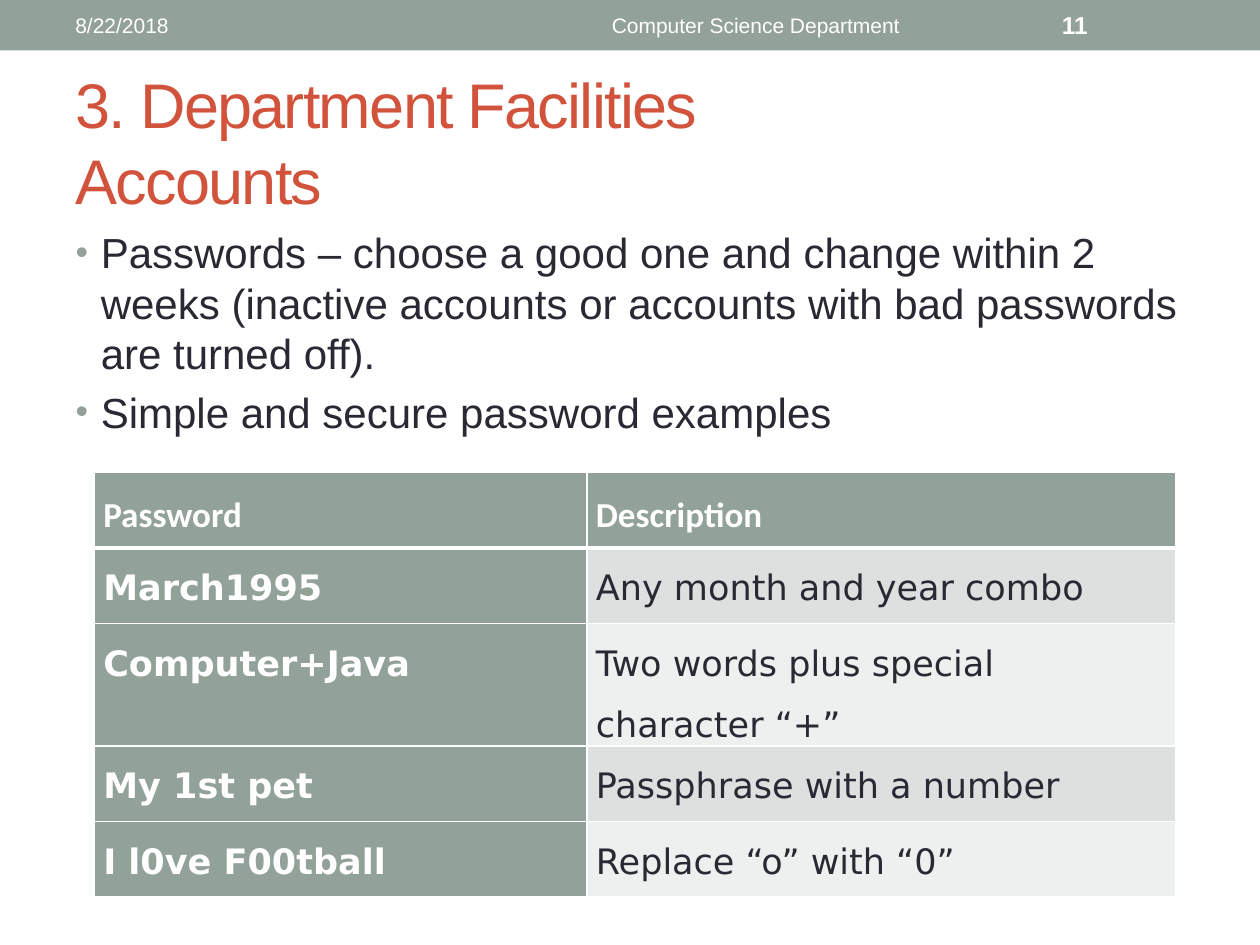
from lxml import etree
from pptx import Presentation
from pptx.dml.color import RGBColor
from pptx.enum.shapes import MSO_SHAPE
from pptx.enum.text import MSO_ANCHOR, MSO_AUTO_SIZE, PP_ALIGN
from pptx.oxml.ns import qn
from pptx.util import Inches, Pt

RECT = MSO_SHAPE.RECTANGLE
TOP, MIDDLE = MSO_ANCHOR.TOP, MSO_ANCHOR.MIDDLE
LEFT, CENTER = PP_ALIGN.LEFT, PP_ALIGN.CENTER
NO_FIT = MSO_AUTO_SIZE.NONE

COLORS = {
    "sage": "93A299",
    "red": "D2533C",
    "ink": "292934",
    "white": "FFFFFF",
    "band_dark": "DCE0DE",
    "band_light": "EEF0EF",
}

TITLE_LINES = ["3. Department Facilities", "Accounts"]
BULLETS = [
    "Passwords – choose a good one and change within 2 weeks "
    "(inactive accounts or accounts with bad passwords are turned off).",
    "Simple and secure password examples",
]
ROWS = [
    ("Password", "Description"),
    ("March1995", "Any month and year combo"),
    ("Computer+Java", "Two words plus special character “+”"),
    ("My 1st pet", "Passphrase with a number"),
    ("I l0ve F00tball", "Replace “o” with “0”"),
]
COL_WIDTHS = [3.91, 4.67]
ROW_HEIGHTS = [0.6, 0.6, 0.71, 0.6, 0.6]


def rgb(name):
    return RGBColor.from_string(COLORS[name])


def add_run(p, text, size, color, font="Arial", bold=False):
    r = p.add_run()
    r.text = text
    r.font.size = Pt(size)
    r.font.name = font
    r.font.bold = bold
    r.font.color.rgb = rgb(color)
    return r


def place(sp, left, top, width, height, anchor):
    """Position a text shape and return its wrapped, fixed-size frame."""
    sp.left, sp.top = Inches(left), Inches(top)
    sp.width, sp.height = Inches(width), Inches(height)
    tf = sp.text_frame
    tf.word_wrap = True
    tf.auto_size = NO_FIT
    tf.vertical_anchor = anchor
    return tf


def add_header_bar(s):
    sp = s.shapes.add_shape(RECT, 0, 0, Inches(10), Inches(0.4))
    sp.shadow.inherit = False
    sp.fill.solid()
    sp.fill.fore_color.rgb = rgb("sage")
    sp.line.fill.background()


def add_header_text(s, text, left, width, size=12, align=LEFT, bold=False):
    sp = s.shapes.add_textbox(0, 0, 0, 0)
    p = place(sp, left, 0.02, width, 0.36, MIDDLE).paragraphs[0]
    p.alignment = align
    add_run(p, text, size, "white", bold=bold)


def fill_title(s):
    p = place(s.shapes.title, 0.5, 0.58, 9, 1.08, MIDDLE).paragraphs[0]
    p.alignment = LEFT
    for i, line in enumerate(TITLE_LINES):
        if i:
            p.add_line_break()
        r = add_run(p, line, 36, "red")
        r.font._element.set("spc", "-100")


def set_bullet(p, indent):
    pPr = p._p.get_or_add_pPr()
    pPr.set("marL", str(Inches(indent)))
    pPr.set("indent", str(-Inches(indent)))
    color = etree.SubElement(pPr, qn("a:buClr"))
    etree.SubElement(color, qn("a:srgbClr"), val=COLORS["sage"])
    etree.SubElement(pPr, qn("a:buSzPct"), val="85000")
    etree.SubElement(pPr, qn("a:buFont"), typeface="Arial")
    etree.SubElement(pPr, qn("a:buChar"), char="•")


def fill_body(s):
    tf = place(s.placeholders[1], 0.5, 1.75, 9, 5.33, TOP)
    for i, text in enumerate(BULLETS):
        p = tf.add_paragraph() if i else tf.paragraphs[0]
        p.alignment = LEFT
        p.space_before = Pt(4.8)
        set_bullet(p, 0.2)
        add_run(p, text, 24, "ink")


def set_borders(cell, top=1, bottom=1):
    tcPr = cell._tc.get_or_add_tcPr()
    sides = [("L", 1), ("R", 1), ("T", top), ("B", bottom)]
    for i, (side, width) in enumerate(sides):
        ln = etree.Element(qn(f"a:ln{side}"), w=str(Pt(width)))
        fill = etree.SubElement(ln, qn("a:solidFill"))
        etree.SubElement(fill, qn("a:srgbClr"), val=COLORS["white"])
        tcPr.insert(i, ln)


def fill_cell(cell, text, row, col):
    strong = row == 0 or col == 0
    band = "band_dark" if row % 2 else "band_light"
    cell.fill.solid()
    cell.fill.fore_color.rgb = rgb("sage" if strong else band)
    cell.margin_left = cell.margin_right = Inches(0.07)
    cell.margin_top = cell.margin_bottom = 0
    set_borders(cell, top=3 if row == 1 else 1, bottom=3 if row == 0 else 1)
    p = cell.text_frame.paragraphs[0]
    p.line_spacing = 1.5
    add_run(p, text, 20, "white" if strong else "ink",
            "DejaVu Sans" if row else "Calibri", strong)


def add_password_table(s):
    frame = s.shapes.add_table(len(ROWS), len(COL_WIDTHS), Inches(0.75),
                               Inches(3.75), Inches(sum(COL_WIDTHS)),
                               Inches(sum(ROW_HEIGHTS)))
    table = frame.table
    table.first_col = True
    for column, width in zip(table.columns, COL_WIDTHS):
        column.width = Inches(width)
    for row, height in zip(table.rows, ROW_HEIGHTS):
        row.height = Inches(height)
    for i, texts in enumerate(ROWS):
        for j, text in enumerate(texts):
            fill_cell(table.cell(i, j), text, i, j)


def main():
    prs = Presentation()
    prs.slide_width, prs.slide_height = Inches(10), Inches(7.5)
    s = prs.slides.add_slide(prs.slide_layouts[1])
    add_header_bar(s)
    fill_title(s)
    fill_body(s)
    add_header_text(s, "8/22/2018", 0.5, 3.17)
    add_header_text(s, "Computer Science Department", 3.75, 4.5, align=CENTER)
    add_header_text(s, "11", 8.33, 1.17, size=14, bold=True)
    add_password_table(s)
    prs.save("out.pptx")


if __name__ == "__main__":
    main()
